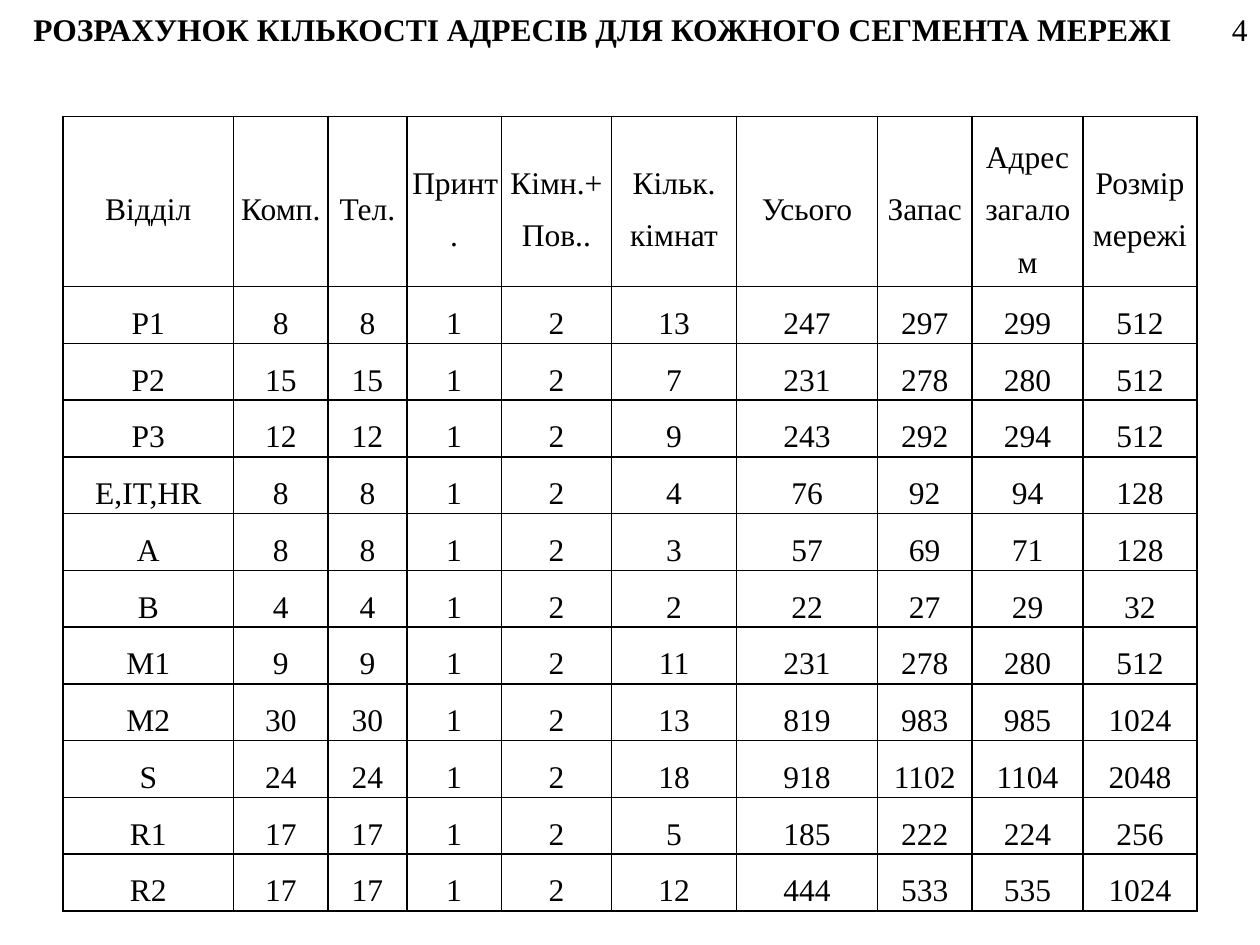
from lxml import etree
from pptx import Presentation
from pptx.dml.color import RGBColor
from pptx.enum import text
from pptx.oxml.ns import qn
from pptx.util import Pt

TITLE = "РОЗРАХУНОК КІЛЬКОСТІ АДРЕСІВ ДЛЯ КОЖНОГО СЕГМЕНТА МЕРЕЖІ"
PAGE = "4"
HEADS = ("Відділ", "Комп.", "Тел.", "Принт.", "Кімн.+ Пов..", "Кільк. кімнат",
         "Усього", "Запас", "Адрес загалом", "Розмір мережі")
DEPTS = [
    ("P1", 8, 8, 1, 2, 13, 247, 297, 299, 512),
    ("P2", 15, 15, 1, 2, 7, 231, 278, 280, 512),
    ("P3", 12, 12, 1, 2, 9, 243, 292, 294, 512),
    ("E,IT,HR", 8, 8, 1, 2, 4, 76, 92, 94, 128),
    ("A", 8, 8, 1, 2, 3, 57, 69, 71, 128),
    ("B", 4, 4, 1, 2, 2, 22, 27, 29, 32),
    ("M1", 9, 9, 1, 2, 11, 231, 278, 280, 512),
    ("M2", 30, 30, 1, 2, 13, 819, 983, 985, 1024),
    ("S", 24, 24, 1, 2, 18, 918, 1102, 1104, 2048),
    ("R1", 17, 17, 1, 2, 5, 185, 222, 224, 256),
    ("R2", 17, 17, 1, 2, 12, 444, 533, 535, 1024),
]
WIDTHS = (97.5, 54, 45, 54, 63, 71.5, 80.5, 54, 63.5, 65)
ROW = 32.4
HEIGHTS = [3 * ROW] + [ROW] * len(DEPTS)
COLORS = {"ink": "000000", "paper": "FFFFFF"}
ALIGN = text.PP_ALIGN
FONT = {"name": "Times New Roman", "size": Pt(18), "bold": False}
PARA = {"alignment": ALIGN.CENTER, "line_spacing": 1.5, "space_after": Pt(8)}
CELL = {"vertical_anchor": text.MSO_ANCHOR.MIDDLE, "margin_left": Pt(3),
        "margin_right": Pt(3), "margin_top": 0, "margin_bottom": 0}


def put(obj, style):
    for key, val in style.items():
        setattr(obj, key, val)


def write(para, words, style, **font):
    put(para, style)
    run = para.add_run()
    run.text = str(words)
    put(run.font, {**FONT, **font})
    run.font.color.rgb = RGBColor.from_string(COLORS["ink"])


def label(slide, words, left, width, align, **font):
    box = slide.shapes.add_textbox(Pt(left), Pt(2), Pt(width), Pt(29))
    box.text_frame.word_wrap = True
    write(box.text_frame.paragraphs[0], words, {"alignment": align}, **font)


def edge(cell):
    """Draw a thin line on all four sides; lines must precede the fill."""
    props = cell._tc.get_or_add_tcPr()
    for side in ("lnL", "lnR", "lnT", "lnB"):
        line = etree.SubElement(props, qn("a:" + side), w=str(Pt(1)))
        fill = etree.SubElement(line, qn("a:solidFill"))
        etree.SubElement(fill, qn("a:srgbClr"), val=COLORS["ink"])


def grid(slide):
    rows = [HEADS] + DEPTS
    frame = slide.shapes.add_table(len(rows), len(HEADS), Pt(36), Pt(66.5),
                                   Pt(sum(WIDTHS)), Pt(sum(HEIGHTS)))
    table = frame.table
    put(table, {"first_row": False, "horz_banding": False})
    for col, width in zip(table.columns, WIDTHS):
        col.width = Pt(width)
    for row, height, vals in zip(table.rows, HEIGHTS, rows):
        row.height = Pt(height)
        for cell, val in zip(row.cells, vals):
            put(cell, CELL)
            edge(cell)
            cell.fill.solid()
            cell.fill.fore_color.rgb = RGBColor.from_string(COLORS["paper"])
            write(cell.text_frame.paragraphs[0], val, PARA)


def main():
    deck = Presentation()
    put(deck, {"slide_width": Pt(720), "slide_height": Pt(540)})
    slide = deck.slides.add_slide(deck.slide_layouts[6])
    label(slide, PAGE, 672, 48, ALIGN.RIGHT)
    label(slide, TITLE, 0, 689, ALIGN.CENTER, bold=True)
    grid(slide)
    deck.save("out.pptx")


if __name__ == "__main__":
    main()
